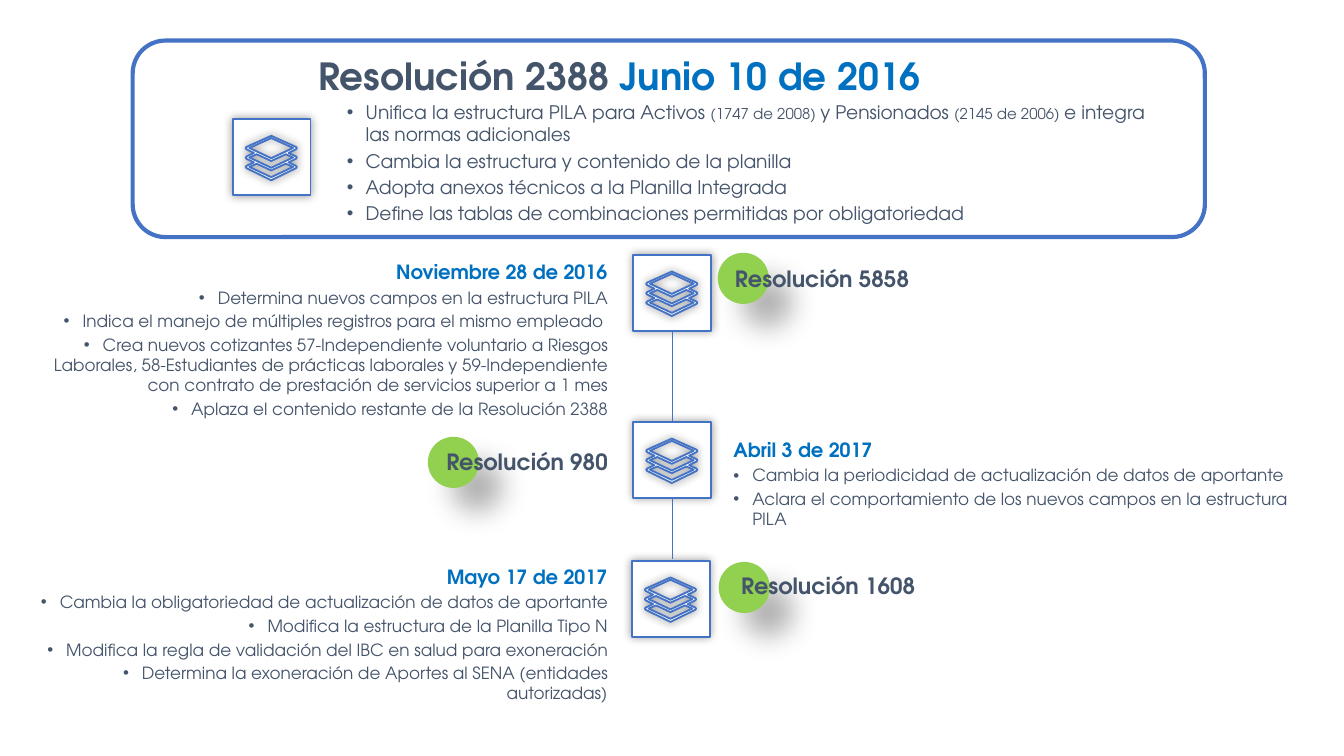
from dataclasses import dataclass

from lxml import etree
from pptx import Presentation
from pptx.dml import color
from pptx.enum import shapes, text
from pptx.oxml import ns
from pptx.util import Pt

COLORS = {"slate": "44546A", "blue": "0070C0", "outline": "4472C4",
          "green": "92D050", "white": "FFFFFF", "black": "000000"}
FONT = "TeX Gyre Adventor"
LEFT, RIGHT, CENTER = text.PP_ALIGN.LEFT, text.PP_ALIGN.RIGHT, text.PP_ALIGN.CENTER
FRAME_W, FRAME_H = 40.6, 41.6
DOT = 27.4
INDENT = 10.1


@dataclass
class Run:
    words: str
    size: float
    hue: str = "slate"
    bold: bool = False


@dataclass
class Shadow:
    alpha: int
    blur: float
    distance: float = 0
    angle: int = 0


@dataclass
class Box:
    left: float
    top: float
    width: float
    height: float


@dataclass
class Milestone:
    date: str
    box: Box
    align: text.PP_ALIGN
    points: list[str]
    resolution: str
    tag: Box
    tag_align: text.PP_ALIGN
    dot: tuple[float, float]
    frame: tuple[float, float]


GLOW = Shadow(40, 5)
DROP = Shadow(30, 15, 18, 45)

SUMMARY = [
    [Run("Unifica la estructura PILA para Activos ", 10), Run("(1747 de 2008) ", 8),
     Run("y Pensionados ", 10), Run("(2145 de 2006) ", 8),
     Run("e integra las normas adicionales", 10)],
    [Run("Cambia la estructura y contenido de la planilla", 10)],
    [Run("Adopta anexos técnicos a la Planilla Integrada", 10)],
    [Run("Define las tablas de combinaciones permitidas por obligatoriedad", 10)],
]
MILESTONES = [
    Milestone("Noviembre 28 de 2016", Box(-2.2, 130.5, 340.6, 102.2), RIGHT,
              ["Determina nuevos campos en la estructura PILA",
               "Indica el manejo de múltiples registros para el mismo empleado ",
               "Crea nuevos cotizantes 57-Independiente voluntario a Riesgos Laborales, "
               "58-Estudiantes de prácticas laborales y 59-Independiente con contrato "
               "de prestación de servicios superior a 1 mes",
               "Aplaza el contenido restante de la Resolución 2388"],
              "Resolución 5858", Box(330.8, 138.5, 163.4, 21.6), RIGHT,
              (384.5, 135.4), (339.8, 136.1)),
    Milestone("Abril 3 de 2017", Box(379.9, 225.8, 337.7, 65.5), LEFT,
              ["Cambia la periodicidad de actualización de datos de aportante",
               "Aclara el comportamiento de los nuevos campos en la estructura PILA"],
              "Resolución 980", Box(232, 236.6, 123.1, 21.6), LEFT,
              (229.2, 234), (339.8, 225.6)),
    Milestone("Mayo 17 de 2017", Box(-2.2, 293.8, 340.6, 91.4), RIGHT,
              ["Cambia la obligatoriedad de actualización de datos de aportante",
               "Modifica la estructura de la Planilla Tipo N",
               "Modifica la regla de validación del IBC en salud para exoneración",
               "Determina la exoneración de Aportes al SENA (entidades autorizadas)"],
              "Resolución 1608", Box(390, 302.7, 136.8, 21.6), LEFT,
              (385, 301), (339.1, 300)),
]


def rgb(hue: str) -> color.RGBColor:
    return color.RGBColor.from_string(COLORS[hue])


def place(box: Box) -> list[Pt]:
    return [Pt(v) for v in (box.left, box.top, box.width, box.height)]


def style(shape, fill: str | None, line: float | None, shadow: Shadow | None = None) -> None:
    shape.shadow.inherit = False
    if fill:
        shape.fill.solid()
        shape.fill.fore_color.rgb = rgb(fill)
    else:
        shape.fill.background()
    if line:
        shape.line.color.rgb = rgb("outline")
        shape.line.width = Pt(line)
    else:
        shape.line.fill.background()
    if shadow:
        effects = shape._element.spPr.find(ns.qn("a:effectLst"))
        outer = etree.SubElement(effects, ns.qn("a:outerShdw"), blurRad=str(Pt(shadow.blur)),
                                 dist=str(Pt(shadow.distance)), dir=str(shadow.angle * 60000),
                                 algn="ctr", rotWithShape="0")
        tint = etree.SubElement(outer, ns.qn("a:srgbClr"), val=COLORS["black"])
        etree.SubElement(tint, ns.qn("a:alpha"), val=str(shadow.alpha * 1000))


def write(paragraph, runs: list[Run], align: text.PP_ALIGN, bullet: bool = False) -> None:
    if bullet:
        props = paragraph._p.get_or_add_pPr()
        props.set("marL", str(Pt(INDENT)))
        props.set("indent", str(-Pt(INDENT)))
        etree.SubElement(props, ns.qn("a:buFont"), typeface="Arial")
        etree.SubElement(props, ns.qn("a:buChar"), char="•")
    paragraph.alignment = align
    for item in runs:
        run = paragraph.add_run()
        run.text = item.words
        for key, value in {"name": FONT, "size": Pt(item.size), "bold": item.bold}.items():
            setattr(run.font, key, value)
        run.font.color.rgb = rgb(item.hue)


def format_frame(frame, anchor: text.MSO_ANCHOR, side: float = 7.2, end: float = 3.6) -> None:
    settings = {"word_wrap": True, "auto_size": text.MSO_AUTO_SIZE.SHAPE_TO_FIT_TEXT,
                "vertical_anchor": anchor, "margin_left": Pt(side), "margin_right": Pt(side),
                "margin_top": Pt(end), "margin_bottom": Pt(end)}
    for key, value in settings.items():
        setattr(frame, key, value)


def draw_list(slide, box: Box, points: list[list[Run]], align: text.PP_ALIGN,
              heading: str | None = None) -> None:
    frame = slide.shapes.add_textbox(*place(box)).text_frame
    format_frame(frame, text.MSO_ANCHOR.TOP, 13, 6.5)
    entries = [([Run(heading, 10.5, "blue", True)], False)] if heading else []
    entries += [(runs, True) for runs in points]
    for number, (runs, bullet) in enumerate(entries):
        paragraph = frame.add_paragraph() if number else frame.paragraphs[0]
        write(paragraph, runs, align, bullet)
        if number:
            paragraph.space_before = Pt(runs[0].size * 0.2)
        if not bullet:
            paragraph.line_spacing = 1.2


def draw_layers_icon(slide, left: float, top: float) -> None:
    # Framed stack of three sheets, symmetrical about its middle
    frame = slide.shapes.add_shape(shapes.MSO_SHAPE.RECTANGLE,
                                   *place(Box(left, top, FRAME_W, FRAME_H)))
    frame.rotation = 90
    style(frame, "white", 1, GLOW)
    middle, step = 13.7, 5.05
    edge = [(middle, 0)]
    for sheet in range(3):
        drop = sheet * step
        edge += [(27, 6 + drop), (27.4, 6.6 + drop), (27, 7.2 + drop)]
        if sheet < 2:
            edge.append((23, 9.2 + drop))
    edge.append((middle, 23.8))
    contours = [edge + [(2 * middle - x, y) for x, y in edge[-2:0:-1]],
                [(2, 6.5), (middle, 1.2), (25.4, 6.5), (middle, 12)]]
    for drop in (0, step):
        contours.append([(2, 11.6 + drop), (5.9, 9.9 + drop), (middle, 13.5 + drop),
                         (21.5, 9.9 + drop), (25.4, 11.6 + drop), (middle, 17.1 + drop)])
    builder = None
    for contour in contours:
        start, *rest = [(Pt(x), Pt(y)) for x, y in contour]
        if builder is None:
            builder = slide.shapes.build_freeform(*start)
        else:
            builder.move_to(*start)
        builder.add_line_segments(rest, close=True)
    style(builder.convert_to_shape(Pt(left + 6.4), Pt(top + 9.4)), "white", 1, GLOW)


def draw_link(slide, start: float, end: float) -> None:
    link = slide.shapes.add_connector(shapes.MSO_CONNECTOR.STRAIGHT,
                                      Pt(360), Pt(start), Pt(360), Pt(end))
    link.line.color.rgb = rgb("outline")
    link.line.width = Pt(0.5)
    etree.SubElement(link._element.spPr, ns.qn("a:effectLst"))


def draw_milestone(slide, item: Milestone) -> None:
    draw_layers_icon(slide, *item.frame)
    dot = slide.shapes.add_shape(shapes.MSO_SHAPE.OVAL, *place(Box(*item.dot, DOT, DOT)))
    style(dot, "green", None, DROP)
    draw_list(slide, item.box, [[Run(point, 9)] for point in item.points],
              item.align, item.date)
    tag = slide.shapes.add_textbox(*place(item.tag)).text_frame
    format_frame(tag, text.MSO_ANCHOR.MIDDLE)
    write(tag.paragraphs[0], [Run(item.resolution, 12, bold=True)], item.tag_align)


def main() -> None:
    deck = Presentation()
    deck.slide_width, deck.slide_height = Pt(720), Pt(405)
    slide = deck.slides.add_slide(deck.slide_layouts[5])

    # Title and summary panel
    title = slide.shapes.title
    title.left, title.top, title.width, title.height = place(Box(159.6, 24.5, 344.9, 31.7))
    format_frame(title.text_frame, text.MSO_ANCHOR.MIDDLE)
    write(title.text_frame.paragraphs[0], [Run("Resolución 2388 ", 20, "slate", True),
                                           Run("Junio 10 de 2016", 20, "blue", True)], CENTER)
    draw_list(slide, Box(172.8, 47.5, 465.8, 80.6), SUMMARY, LEFT)
    panel = slide.shapes.add_shape(shapes.MSO_SHAPE.ROUNDED_RECTANGLE,
                                   *place(Box(71.1, 21.7, 574.4, 105.3)))
    style(panel, None, 2.25)
    draw_layers_icon(slide, 125.2, 63.4)

    # Timeline
    for item in MILESTONES:
        draw_milestone(slide, item)
    draw_link(slide, 177.1, 226.1)
    draw_link(slide, 266.4, 299.5)

    deck.save("out.pptx")


if __name__ == "__main__":
    main()
